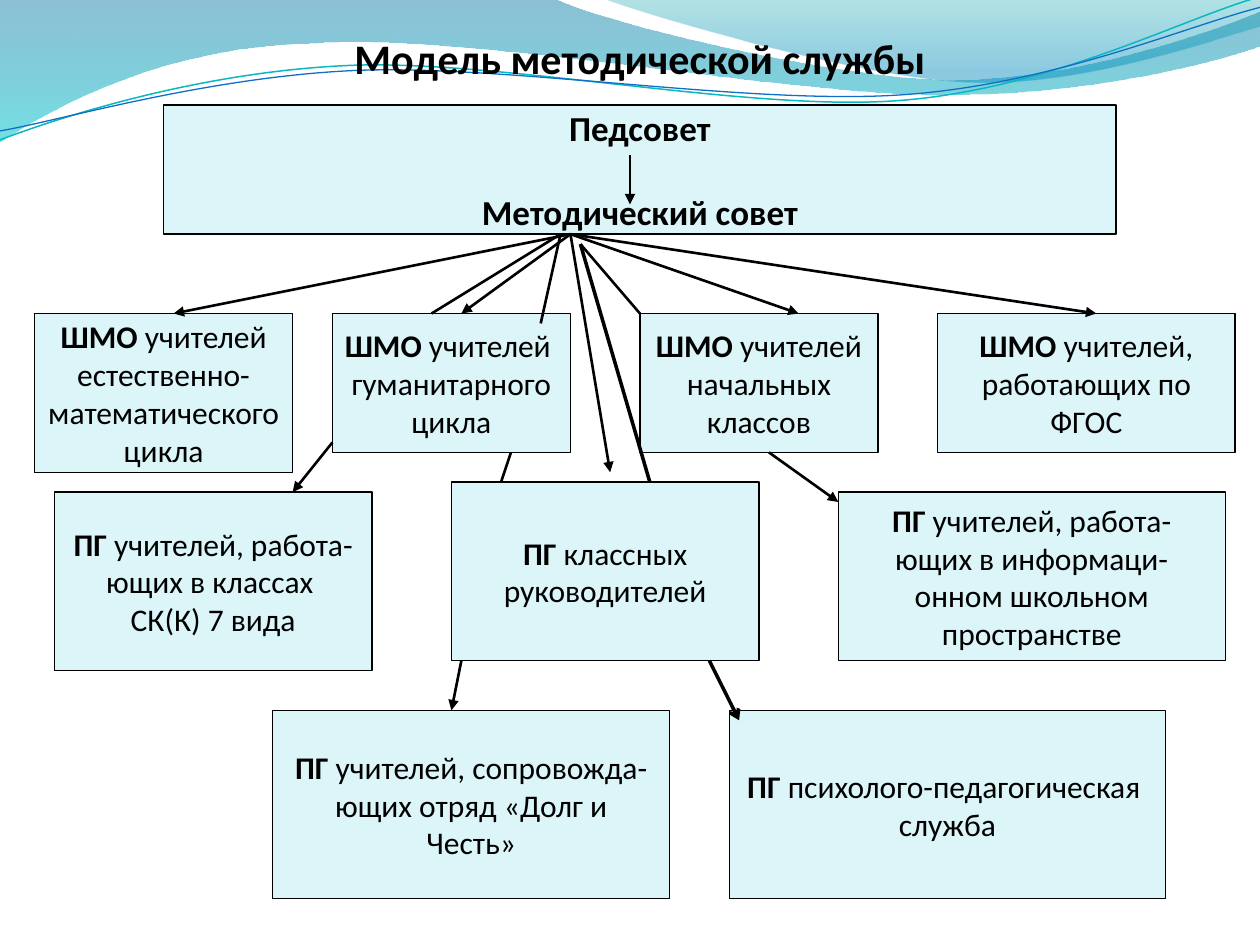
from dataclasses import dataclass
from typing import Optional

from lxml.etree import SubElement
from pptx import Presentation
from pptx.dml.color import RGBColor
from pptx.enum.shapes import MSO_CONNECTOR, MSO_SHAPE
from pptx.enum.text import MSO_ANCHOR, PP_ALIGN
from pptx.oxml.ns import qn
from pptx.util import Cm, Pt

FONT = "Calibri"
BLACK = RGBColor(0x00, 0x00, 0x00)
PALE_BLUE = RGBColor(0xDB, 0xF5, 0xF9)
DEEP_BLUE = RGBColor(0x00, 0x74, 0xA1)
CYAN = RGBColor(0x00, 0xC6, 0xCF)
TEAL = RGBColor(0x00, 0xA1, 0xA9)
SKY_BLUE = RGBColor(0x00, 0x8B, 0xBF)
TEAL_LINE = RGBColor(0x0A, 0xB8, 0xBF)
BLUE_LINE = RGBColor(0x0F, 0x6F, 0xC6)


@dataclass
class Stop:
    position: float
    color: RGBColor
    opacity: int


@dataclass
class Wave:
    """Segments hold one point (line) or three points (cubic curve), in cm."""
    start: tuple
    segments: list
    stops: tuple = ()
    line_color: Optional[RGBColor] = None
    line_width: float = 0


@dataclass
class Box:
    left: float
    top: float
    width: float
    height: float
    bold: str
    lines: list


@dataclass
class Link:
    start: tuple
    end: tuple
    head: Optional[str] = "triangle"
    width: float = 1.5


WAVES = [
    Wave((0, 0), [
        [(11.18, -0.03)],
        [(12.09, 0.43), (16.87, 1.6), (19.25, 1.6)],
        [(21.67, 1.6), (24.33, 0.66), (25.4, 0.23)],
        [(25.43, 0.91)],
        [(24.97, 1.12), (22.1, 1.93), (18.95, 1.91)],
        [(15.8, 1.91), (9.7, 0.71), (6.53, 0.86)],
        [(3.28, 0.91), (1.17, 2.11), (-0.03, 2.87)],
    ], stops=(Stop(0, DEEP_BLUE, 45), Stop(1, CYAN, 55))),
    Wave((12.17, -0.03), [
        [(12.93, 0.28), (17.32, 1.57), (19.53, 1.65)],
        [(21.74, 1.75), (24.41, 0.81), (25.4, 0.53)],
        [(25.4, 0)],
    ], stops=(Stop(0, TEAL, 30), Stop(0.8, SKY_BLUE, 45))),
    Wave((0, 2.82), [
        [(1.22, 2.36), (4.01, 1.45), (7.04, 1.32)],
        [(10.03, 1.19), (15.06, 2.26), (18.11, 2.03)],
        [(21.16, 1.8), (23.83, 0.38), (25.35, -0.05)],
    ], line_color=TEAL_LINE, line_width=0.85),
    Wave((0, 2.64), [
        [(1.19, 2.44), (4.17, 1.55), (7.19, 1.42)],
        [(10.24, 1.3), (15.16, 2.13), (18.21, 1.91)],
        [(21.23, 1.7), (23.9, 0.53), (25.4, 0.15)],
    ], line_color=BLUE_LINE, line_width=0.75),
]

UNION_TOP, UNION_HEIGHT = 6.32, 2.8
GROUP_TOP, GROUP_HEIGHT = 9.92, 3.6
BOTTOM_TOP, BOTTOM_HEIGHT = 14.32, 3.8
BOXES = [
    Box(0.7, UNION_TOP, 5.2, 3.2, "ШМО",
        [" учителей", "естественно-", "математического", "цикла"]),
    Box(6.7, UNION_TOP, 4.8, UNION_HEIGHT, "ШМО",
        [" учителей ", "гуманитарного", "цикла"]),
    Box(12.9, UNION_TOP, 4.8, UNION_HEIGHT, "ШМО",
        [" учителей", "начальных", "классов"]),
    Box(18.9, UNION_TOP, 6, UNION_HEIGHT, "ШМО",
        [" учителей,", "работающих по", "ФГОС"]),
    Box(1.1, GROUP_TOP, 6.4, GROUP_HEIGHT, "ПГ",
        [" учителей, работа-", "ющих в классах ", "СК(К) 7 вида"]),
    Box(9.1, 9.72, 6.2, GROUP_HEIGHT, "ПГ", [" классных", "руководителей"]),
    Box(16.9, GROUP_TOP, 7.8, 3.4, "ПГ",
        [" учителей, работа-", "ющих в информаци-", "онном школьном", "пространстве"]),
    Box(5.5, BOTTOM_TOP, 8, BOTTOM_HEIGHT, "ПГ",
        [" учителей, сопровожда-", "ющих отряд «Долг и", "Честь»"]),
    Box(14.7, BOTTOM_TOP, 8.8, BOTTOM_HEIGHT, "ПГ ",
        ["психолого-педагогическая ", "служба"]),
]

# The links fan out from three points under the council box
HUB, HUB_LEFT, HUB_RIGHT = (11.5, 4.72), (11.3, 4.72), (11.7, 4.92)
LINKS = [
    Link((12.7, 3.12), (12.7, 4.12)),
    *[Link(HUB, (x, UNION_TOP)) for x in (3.5, 9.3, 16.1, 22.1)],
    Link(HUB_LEFT, (8.7, UNION_TOP), head=None),
    Link((6.7, 8.92), (5.9, GROUP_TOP)),
    Link(HUB, (12.3, 9.52)),
    Link(HUB_RIGHT, (12.9, UNION_TOP), head=None),
    Link((15.5, 9.12), (16.9, 10.12)),
    Link(HUB_LEFT, (10.9, 6.52), head=None),
    Link((10.3, 9.12), (10.1, 9.72), head=None),
    Link((9.3, 13.32), (9.1, BOTTOM_TOP)),
    Link(HUB_RIGHT, (13.1, 9.72), head=None, width=2),
    Link((14.3, 13.32), (14.9, 14.52), head="arrow", width=2),
]


def draw_wave(slide, wave: Wave) -> None:
    points = [point for segment in wave.segments for point in segment]
    builder = slide.shapes.build_freeform(Cm(wave.start[0]), Cm(wave.start[1]))
    builder.add_line_segments([(Cm(x), Cm(y)) for x, y in points], close=bool(wave.stops))
    shape = builder.convert_to_shape()
    shape.shadow.inherit = False

    # Join the three steps of each curved segment into one cubic curve
    steps = iter(list(shape._element.iter(qn("a:lnTo"))))
    for segment in wave.segments:
        first, *others = [next(steps) for _ in segment]
        if others:
            first.tag = qn("a:cubicBezTo")
        for step in others:
            first.append(step[0])
            step.getparent().remove(step)

    if not wave.stops:
        shape.fill.background()
        shape.line.color.rgb = wave.line_color
        shape.line.width = Pt(wave.line_width)
        return
    shape.line.fill.background()
    shape.fill.gradient()
    shape.fill.gradient_angle = 270
    for gradient_stop, stop in zip(shape.fill.gradient_stops, wave.stops):
        gradient_stop.position = stop.position
        gradient_stop.color.rgb = stop.color
    for color, stop in zip(shape._element.spPr.iter(qn("a:srgbClr")), wave.stops):
        SubElement(color, qn("a:alpha"), val=str(stop.opacity * 1000))


def format_paragraph(paragraph, size: float) -> None:
    paragraph.alignment = PP_ALIGN.CENTER
    paragraph.font.name = FONT
    paragraph.font.size = Pt(size)
    paragraph.font.color.rgb = BLACK


def draw_box(slide, box: Box, size: float = 18):
    shape = slide.shapes.add_shape(MSO_SHAPE.RECTANGLE, Cm(box.left), Cm(box.top),
                                   Cm(box.width), Cm(box.height))
    shape.shadow.inherit = False
    shape.fill.solid()
    shape.fill.fore_color.rgb = PALE_BLUE
    shape.line.color.rgb = BLACK
    shape.line.width = Pt(0.75)
    frame = shape.text_frame
    frame.word_wrap = False
    frame.vertical_anchor = MSO_ANCHOR.MIDDLE
    for index, line in enumerate(box.lines):
        paragraph = frame.add_paragraph() if index else frame.paragraphs[0]
        format_paragraph(paragraph, size)
        if index == 0 and box.bold:
            bold_run = paragraph.add_run()
            bold_run.text = box.bold
            bold_run.font.bold = True
        paragraph.add_run().text = line
    return shape


def draw_link(slide, link: Link) -> None:
    connector = slide.shapes.add_connector(
        MSO_CONNECTOR.STRAIGHT, *[Cm(value) for value in link.start + link.end])
    connector.line.color.rgb = BLACK
    connector.line.width = Pt(link.width)
    if link.head:
        SubElement(connector.line._get_or_add_ln(), qn("a:tailEnd"), type=link.head)
    SubElement(connector._element.spPr, qn("a:effectLst"))


def main() -> None:
    presentation = Presentation()
    presentation.slide_width, presentation.slide_height = Cm(25.4), Cm(19.05)
    slide = presentation.slides.add_slide(presentation.slide_layouts[5])

    # Background waves
    for wave in WAVES:
        draw_wave(slide, wave)

    # Title, brought in front of the waves
    title = slide.shapes.title
    slide.shapes._spTree.append(title._element)
    title.left, title.top, title.width, title.height = Cm(4.7), Cm(0.53), Cm(16.4), Cm(1.27)
    title.text_frame.text = "Модель методической службы"
    title.text_frame.vertical_anchor = MSO_ANCHOR.MIDDLE
    format_paragraph(title.text_frame.paragraphs[0], 24)
    title.text_frame.paragraphs[0].font.bold = True

    # Council box, with room for the arrow between its two lines
    council = draw_box(slide, Box(3.3, 2.12, 19.2, 2.6, "",
                                  ["Педсовет", "Методический совет"]), size=20)
    for paragraph in council.text_frame.paragraphs:
        paragraph.font.bold = True
    council.text_frame.paragraphs[0].space_after = Pt(24)

    # Unions and groups, then the links between them
    for box in BOXES:
        draw_box(slide, box)
    for link in LINKS:
        draw_link(slide, link)

    presentation.save("out.pptx")


if __name__ == "__main__":
    main()
